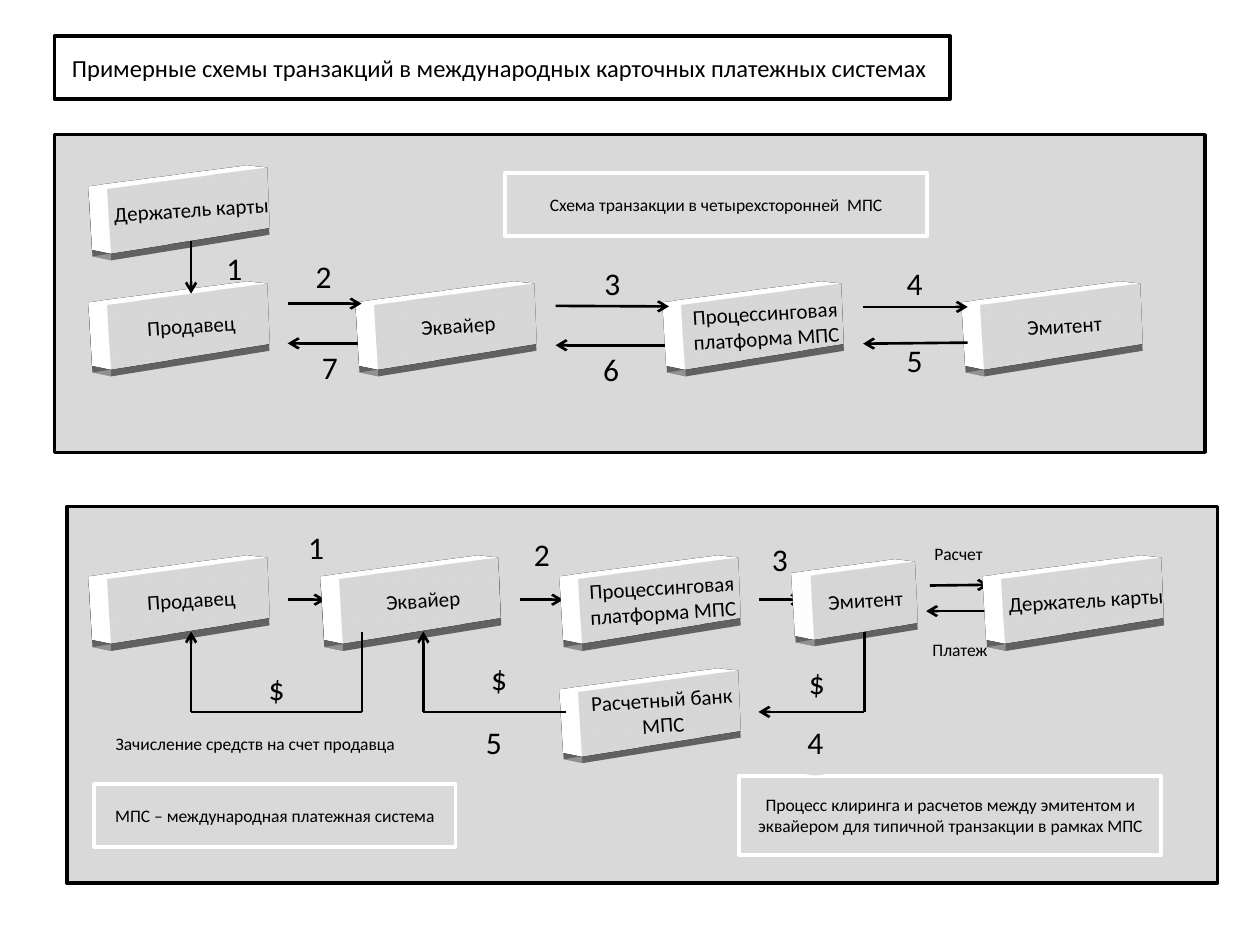
from lxml import etree
from pptx import Presentation
from pptx.dml.color import RGBColor
from pptx.enum.shapes import MSO_CONNECTOR, MSO_SHAPE
from pptx.enum.text import MSO_ANCHOR, MSO_AUTO_SIZE, PP_ALIGN
from pptx.oxml import parse_xml
from pptx.oxml.ns import nsdecls, qn
from pptx.util import Pt

RECT, OVAL, STRAIGHT = MSO_SHAPE.RECTANGLE, MSO_SHAPE.OVAL, MSO_CONNECTOR.STRAIGHT
MIDDLE, CENTER, NO_FIT = MSO_ANCHOR.MIDDLE, PP_ALIGN.CENTER, MSO_AUTO_SIZE.NONE
COLORS = {"black": "000000", "white": "FFFFFF", "grey": "D9D9D9"}
BOX_W, BOX_H = 110.6, 36

# Soft shadow, perspective camera and extrusion of the participant boxes
DEPTH_EFFECTS = [
    f"""<a:effectLst {nsdecls("a")}>
      <a:outerShdw blurRad="225425" dist="50800" dir="5220000" algn="ctr">
        <a:srgbClr val="{COLORS["black"]}"><a:alpha val="33000"/></a:srgbClr>
      </a:outerShdw></a:effectLst>""",
    f"""<a:scene3d {nsdecls("a")}>
      <a:camera prst="perspectiveFront" fov="3300000">
        <a:rot lat="486000" lon="19530000" rev="174000"/></a:camera>
      <a:lightRig rig="harsh" dir="t"><a:rot lat="0" lon="0" rev="3000000"/></a:lightRig>
    </a:scene3d>""",
    f"""<a:sp3d extrusionH="254000" contourW="19050" {nsdecls("a")}>
      <a:bevelT w="82550" h="44450" prst="angle"/><a:bevelB w="82550" h="44450" prst="angle"/>
      <a:contourClr><a:srgbClr val="{COLORS["white"]}"/></a:contourClr></a:sp3d>""",
]


def write(sp, text, size=12, color="black", font="Calibri"):
    tf = sp.text_frame
    tf.word_wrap = True
    tf.auto_size = NO_FIT
    tf.vertical_anchor = MIDDLE
    p = tf.paragraphs[0]
    p.alignment = CENTER
    r = p.add_run()
    r.text = text
    r.font.size = Pt(size)
    r.font.name = font
    r.font.color.rgb = RGBColor.from_string(COLORS[color])


def paint(sp, fill, line=None, width=2):
    """Set fill and outline by colour name; no line name means no outline."""
    sp.fill.solid()
    sp.fill.fore_color.rgb = RGBColor.from_string(COLORS[fill])
    if line:
        sp.line.color.rgb = RGBColor.from_string(COLORS[line])
        sp.line.width = Pt(width)
    else:
        sp.line.fill.background()


prs = Presentation()
prs.slide_width, prs.slide_height = Pt(720), Pt(540)
slide = prs.slides.add_slide(prs.slide_layouts[5])
shapes = slide.shapes

title = shapes.title
title.left, title.top, title.width, title.height = Pt(31), Pt(20.6), Pt(512), Pt(36)
paint(title, "white", "black")
write(title, "Примерные схемы транзакций в международных карточных платежных системах ", size=14)

# Panels, captions and step marks: shape, left, top, width, height, outline, size, text
blocks = [
    (RECT, 31, 77, 657.5, 181.5, "black", 10, ""),
    (RECT, 38.2, 289.4, 657.5, 215.3, "black", 10, ""),
    (RECT, 422.4, 443.3, 241.2, 45.4, "white", 10,
     "Процесс клиринга и расчетов между эмитентом и эквайером для типичной транзакции в рамках МПС"),
    (RECT, 288.5, 98.9, 241.2, 36, "white", 10, "Схема транзакции в четырехсторонней  МПС"),
    (RECT, 53.7, 448, 206.6, 36, "white", 10, "МПС – международная платежная система"),
    (RECT, 41, 406.8, 209.5, 36, "grey", 10, "Зачисление средств на счет продавца"),
    (RECT, 511.7, 298.1, 72, 36, "grey", 10, "Расчет"),
    (RECT, 512.6, 353, 72, 36, "grey", 10, "Платеж"),
]
four_party_steps = [("1", 116, 134.9), ("2", 167, 139.7), ("3", 331.9, 143.5),
                    ("4", 504.7, 143.5), ("5", 504.7, 187.9), ("6", 331.2, 193),
                    ("7", 170.6, 191.8)]
clearing_steps = [("1", 162.7, 294.3), ("2", 291.6, 298.4), ("3", 427.7, 301.5),
                  ("4", 447.9, 406.1), ("5", 264.2, 406.1)]
for step, x, y in four_party_steps + clearing_steps:
    blocks.append((OVAL, x, y, 36, 36, "grey", 18, step))
for x, y in [(442, 367.2), (260.4, 364.5), (133.2, 370.6)]:
    blocks.append((OVAL, x, y, 49.7, 45.4, "grey", 18, "$"))

for kind, x, y, w, h, outline, size, text in blocks:
    sp = shapes.add_shape(kind, Pt(x), Pt(y), Pt(w), Pt(h))
    sp.shadow.inherit = False
    paint(sp, "grey", outline)
    if text:
        write(sp, text, size=size)

# Participants: left, top, width, text
ROW_HOLDER, ROW_SCHEME, ROW_CLEARING, ROW_BANK = 101.5, 167.8, 324.7, 388.8
participants = [
    (54, ROW_HOLDER, BOX_W, "Держатель карты"),
    (54, ROW_SCHEME, BOX_W, "Продавец"),
    (206.6, ROW_SCHEME, BOX_W, "Эквайер"),
    (382.3, ROW_SCHEME, BOX_W, "Процессинговая платформа МПС"),
    (553, ROW_SCHEME, BOX_W, "Эмитент"),
    (54, ROW_CLEARING, BOX_W, "Продавец"),
    (186.5, ROW_CLEARING, BOX_W, "Эквайер"),
    (323.3, ROW_CLEARING, BOX_W, "Процессинговая платформа МПС"),
    (458.6, ROW_CLEARING, 72, "Эмитент"),
    (565.2, ROW_CLEARING, BOX_W, "Держатель карты"),
    (323.3, ROW_BANK, BOX_W, "Расчетный банк МПС"),
]

# Connectors: x1, y1, x2, y2, has arrowhead
behind = [(164.4, 342.7, 186, 342.7, True), (297.4, 342.7, 321.8, 342.7, True),
          (433.6, 342.7, 458.6, 342.7, True), (531.4, 334.6, 565.2, 334.2, True),
          (565.2, 349.2, 529.2, 349.2, True), (382.3, 197.3, 317.5, 197.3, True),
          (206.6, 196.2, 164.4, 196.2, True)]
in_front = [(109.2, 137.5, 109.2, 167.8, True), (164.4, 173.5, 206.6, 173.5, True),
            (317.5, 174.8, 382.3, 175.1, True), (493.2, 175.4, 553, 175.4, True),
            (553, 195.8, 493.2, 196.4, True),
            (493.9, 360.9, 493.9, 406.8, False), (493.9, 406.8, 433.4, 406.8, True),
            (323.3, 406.8, 241.9, 406.8, False), (241.9, 406.8, 241.9, 360.9, True),
            (206.8, 360.9, 206.8, 406.8, False), (206.8, 406.8, 109.2, 406.8, False),
            (109.2, 406.8, 109.2, 360.9, True)]

for layer in (behind, in_front):
    for x1, y1, x2, y2, has_head in layer:
        line = shapes.add_connector(STRAIGHT, Pt(x1), Pt(y1), Pt(x2), Pt(y2))
        line.line.color.rgb = RGBColor.from_string(COLORS["black"])
        line.line.width = Pt(1.5)
        if has_head:
            etree.SubElement(line.line._get_or_add_ln(), qn("a:tailEnd"), type="arrow")
        etree.SubElement(line._element.spPr, qn("a:effectLst"))
    if layer is in_front:
        break
    for x, y, w, text in participants:
        sp = shapes.add_shape(RECT, Pt(x), Pt(y), Pt(w), Pt(BOX_H))
        paint(sp, "white")
        write(sp, text)
        for effect in DEPTH_EFFECTS:
            sp._element.spPr.append(parse_xml(effect))

prs.save("out.pptx")
